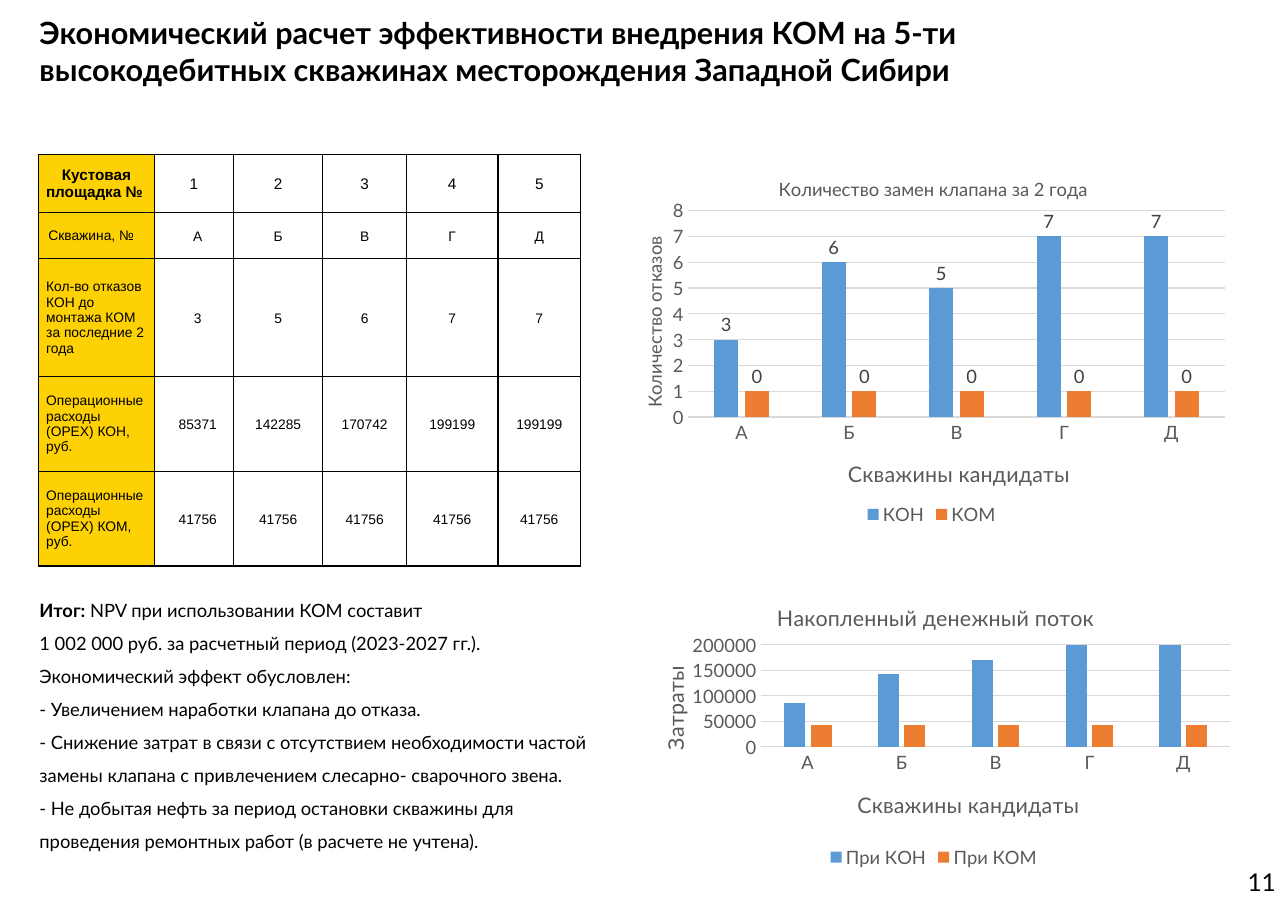
import pptx
import pptx.chart.data
import pptx.dml.color
import pptx.enum.chart
import pptx.enum.text
import pptx.oxml
import pptx.oxml.ns
import pptx.util
from lxml import etree

PX = 9144  # one px is a hundredth of an inch
INK = {"black": "000000", "white": "FFFFFF", "gold": "FED104", "blue": "5B9BD5",
       "orange": "ED7D31", "text": "595959", "label": "404040", "grid": "D9D9D9"}
WELLS = ["А", "Б", "В", "Г", "Д"]
COLS = [105, 72, 81, 76, 83, 75]
ROWS = [53, 42, 107, 86, 86]
CELLS = [
    ["Кустовая площадка № ", "1", "2", "3", "4", "5"],
    ["Скважина, №", *WELLS],
    ["Кол-во отказов КОН до монтажа КОМ за последние 2 года", "3", "5", "6", "7", "7"],
    ["Операционные расходы (OPEX) КОН, руб.", "85371", "142285", "170742", "199199", "199199"],
    ["Операционные расходы (OPEX) КОМ, руб.", *["41756"] * 5],
]
NOTES = [
    "Экономический эффект обусловлен:",
    "- Увеличением наработки клапана до отказа.",
    "- Снижение затрат в связи с отсутствием необходимости частой замены клапана "
    "с привлечением слесарно- сварочного звена.",
    "- Не добытая нефть за период остановки скважины для проведения ремонтных работ "
    "(в расчете не учтена).",
]
ALIGN = pptx.enum.text.PP_ALIGN
qn = pptx.oxml.ns.qn


def px(*nums):
    return [pptx.util.Emu(n * PX) for n in nums]


def rgb(name):
    return pptx.dml.color.RGBColor.from_string(INK[name])


def style(font, size, ink="black", face="Lato", bold=False):
    font.size, font.name, font.bold = pptx.util.Pt(size), face, bold
    font.color.rgb = rgb(ink)


def write(para, text, size, **look):
    run = para.add_run()
    run.text = text
    style(run.font, size, **look)


def add_box(slide, box):
    frame = slide.shapes.add_textbox(*px(*box)).text_frame
    frame.word_wrap = True
    return frame


def add_head(slide, box):
    write(add_box(slide, box).paragraphs[0],
          "Экономический расчет эффективности внедрения КОМ на 5-ти "
          "высокодебитных скважинах месторождения Западной Сибири", 20, bold=True)


def add_notes(slide, box):
    frame = add_box(slide, box)
    para = frame.paragraphs[0]
    para.line_spacing = 1.5
    write(para, "Итог: ", 12, bold=True)
    write(para, "NPV при использовании КОМ составит ", 12)
    para.add_line_break()
    write(para, "1 002 000 руб. за расчетный период (2023-2027 гг.).", 12)
    for note in NOTES:
        para = frame.add_paragraph()
        para.line_spacing = 1.5
        write(para, note, 12)


def add_page(slide, box):
    frame = add_box(slide, box)
    frame.margin_left = frame.margin_top = frame.margin_right = frame.margin_bottom = 0
    frame.paragraphs[0].alignment = ALIGN.RIGHT
    write(frame.paragraphs[0], "11", 16)


def edge(cell):
    """Draw thin black borders, which must come before the fill."""
    props = cell._tc.get_or_add_tcPr()
    for side in ("lnL", "lnR", "lnT", "lnB"):
        line = etree.SubElement(props, qn(f"a:{side}"), w="12700")
        fill = etree.SubElement(line, qn("a:solidFill"))
        etree.SubElement(fill, qn("a:srgbClr"), val=INK["black"])


def add_grid(slide, box):
    table = slide.shapes.add_table(len(ROWS), len(COLS), *px(*box)).table
    for col, width in zip(table.columns, px(*COLS)):
        col.width = width
    for row, height in zip(table.rows, px(*ROWS)):
        row.height = height
    for r, texts in enumerate(CELLS):
        for c, text in enumerate(texts):
            cell = table.cell(r, c)
            edge(cell)
            cell.fill.solid()
            cell.fill.fore_color.rgb = rgb("white" if c else "gold")
            cell.vertical_anchor = pptx.enum.text.MSO_ANCHOR.MIDDLE
            label = c == 0 and r > 0
            if label:
                pads = (9 if r == 1 else 7, 4, 9, 4)
            else:
                pads = (8 if c == 1 and r else 1, 1, 1, 0)
            (cell.margin_left, cell.margin_top,
             cell.margin_right, cell.margin_bottom) = px(*pads)
            para = cell.text_frame.paragraphs[0]
            para.alignment = ALIGN.LEFT if label else ALIGN.CENTER
            write(para, text, 9 if r else 10, face="Arial", bold=r == c == 0)


def place(node, index, inner=False, **spots):
    """Fix a chart part at fractions of the chart's size."""
    layout = node.find(qn("c:layout"))
    if layout is None:
        layout = etree.Element(qn("c:layout"))
        node.insert(index, layout)
    manual = etree.SubElement(layout, qn("c:manualLayout"))
    if inner:
        etree.SubElement(manual, qn("c:layoutTarget"), val="inner")
    for key in ("x", "y"):
        etree.SubElement(manual, qn(f"c:{key}Mode"), val="edge")
    for key, spot in spots.items():
        etree.SubElement(manual, qn(f"c:{key}"), val=str(spot))


def name(title, text, size, x, y):
    write(title.text_frame.paragraphs[0], text, size, ink="text")
    place(title._element, 1, x=x, y=y)


def add_chart(slide, box, title, cost, bars, plot):
    """Titles are (text, size, x, y); cost is the value axis title."""
    data = pptx.chart.data.CategoryChartData()
    data.categories = WELLS
    for key, vals in bars.items():
        data.add_series(key, vals)
    kind = pptx.enum.chart.XL_CHART_TYPE.COLUMN_CLUSTERED
    chart = slide.shapes.add_chart(kind, *px(*box), data).chart
    style(chart.font, 10)
    chart.has_title = True
    name(chart.chart_title, *title)
    across, up = chart.category_axis, chart.value_axis
    name(across.axis_title, "Скважины кандидаты", 14, *plot["foot"])
    name(up.axis_title, *cost)
    body = up.axis_title._element.find(".//" + qn("a:bodyPr"))
    body.set("rot", "-5400000")
    body.set("vert", "horz")
    for axis in (across, up):
        axis.major_tick_mark = pptx.enum.chart.XL_TICK_MARK.NONE
        style(axis.tick_labels.font, 12, ink="text")
    up.format.line.fill.background()
    for line in (across.format.line, up.major_gridlines.format.line):
        line.color.rgb = rgb("grid")
        line.width = pptx.util.Pt(0.75)
    chart.has_legend = True
    chart.legend.position = pptx.enum.chart.XL_LEGEND_POSITION.BOTTOM
    chart.legend.include_in_layout = False
    style(chart.legend.font, 12, ink="text")
    group = chart.plots[0]
    group.vary_by_categories = False
    group.gap_width, group.overlap = 219, -27
    for bar, ink in zip(group.series, ("blue", "orange")):
        bar.format.fill.solid()
        bar.format.fill.fore_color.rgb = rgb(ink)
    place(chart._chartSpace.chart.plotArea, 0, inner=True, **plot["area"])
    return chart


def add_marks(chart):
    """Label the bars; the second series reads as zero."""
    end = pptx.enum.chart.XL_LABEL_POSITION.OUTSIDE_END
    for bar in chart.plots[0].series:
        marks = bar.data_labels
        marks.show_value = True
        marks.position = end
        style(marks.font, 12, ink="label")
    for i in range(len(WELLS)):
        mark = bar.points[i].data_label
        write(mark.text_frame.paragraphs[0], "0", 12, ink="label")
        mark.position = end


def main():
    deck = pptx.Presentation()
    deck.slide_width, deck.slide_height = px(1169, 827)
    slide = deck.slides.add_slide(deck.slide_layouts[6])
    add_grid(slide, (35, 140, 492, 374))
    add_notes(slide, (26, 529, 536, 252))
    swaps = add_chart(
        slide, (562, 140, 567, 341),
        ("Количество замен клапана за 2 года", 12, 0.25, 0.05),
        ("Количество отказов", 12, 0.03, 0.21),
        {"КОН": [3, 6, 5, 7, 7], "КОМ": [1] * 5},
        {"foot": (0.36, 0.8), "area": {"x": 0.11, "y": 0.15, "w": 0.86, "h": 0.55}})
    add_marks(swaps)
    cash = add_chart(
        slide, (567, 527, 561, 265),
        ("Накопленный денежный поток", 14, 0.24, 0.06),
        ("Затраты", 14, 0.05, 0.28),
        {"При КОН": [85000, 142000, 171000, 199000, 199000], "При КОМ": [42000] * 5},
        {"foot": (0.37, 0.7), "area": {"x": 0.22, "y": 0.22, "w": 0.76, "h": 0.35}})
    cash.value_axis.maximum_scale = 200000
    cash.value_axis.major_unit = 50000
    add_head(slide, (26, 8, 1002, 77))
    add_page(slide, (791, 787, 367, 40))
    deck.save("out.pptx")


if __name__ == "__main__":
    main()
